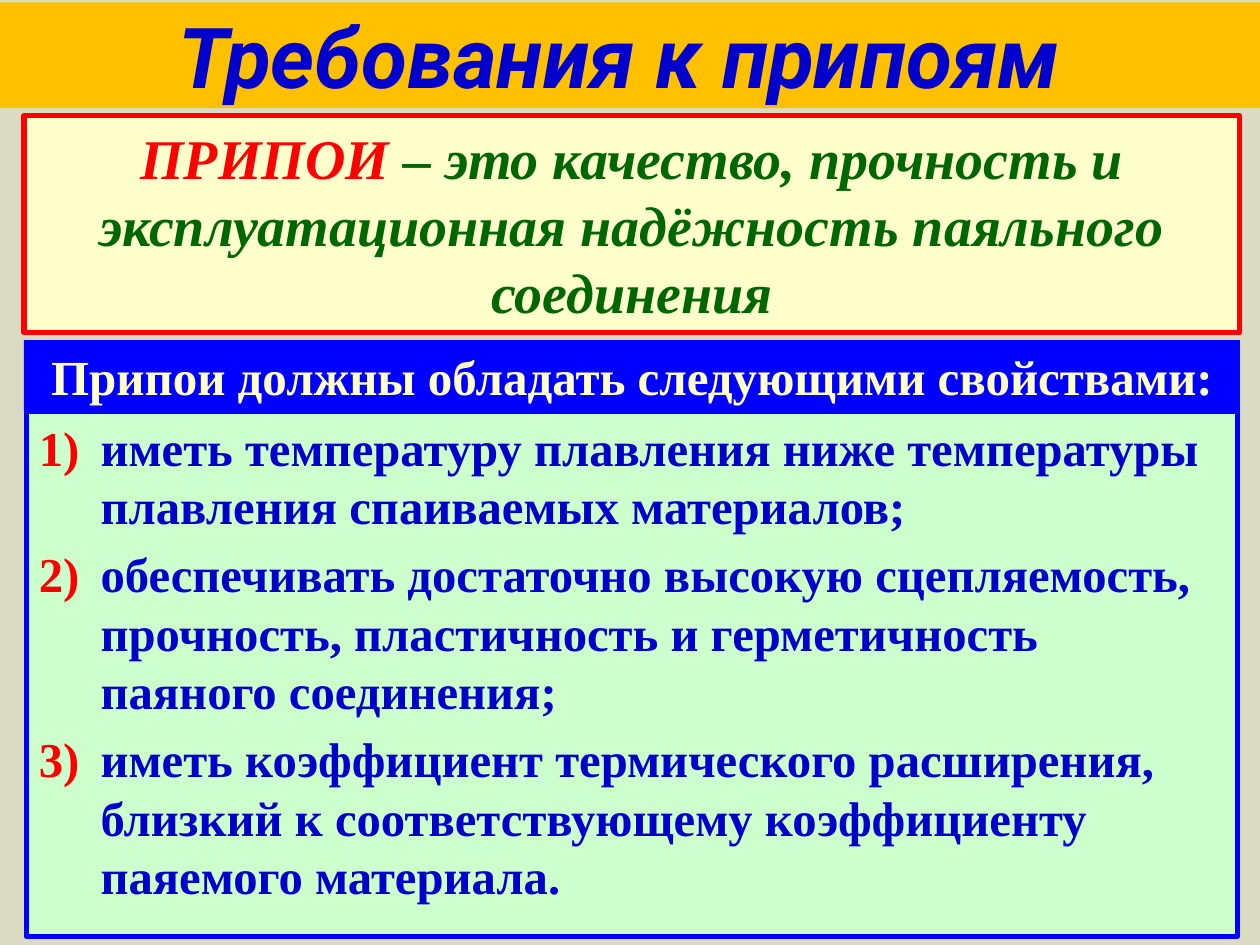
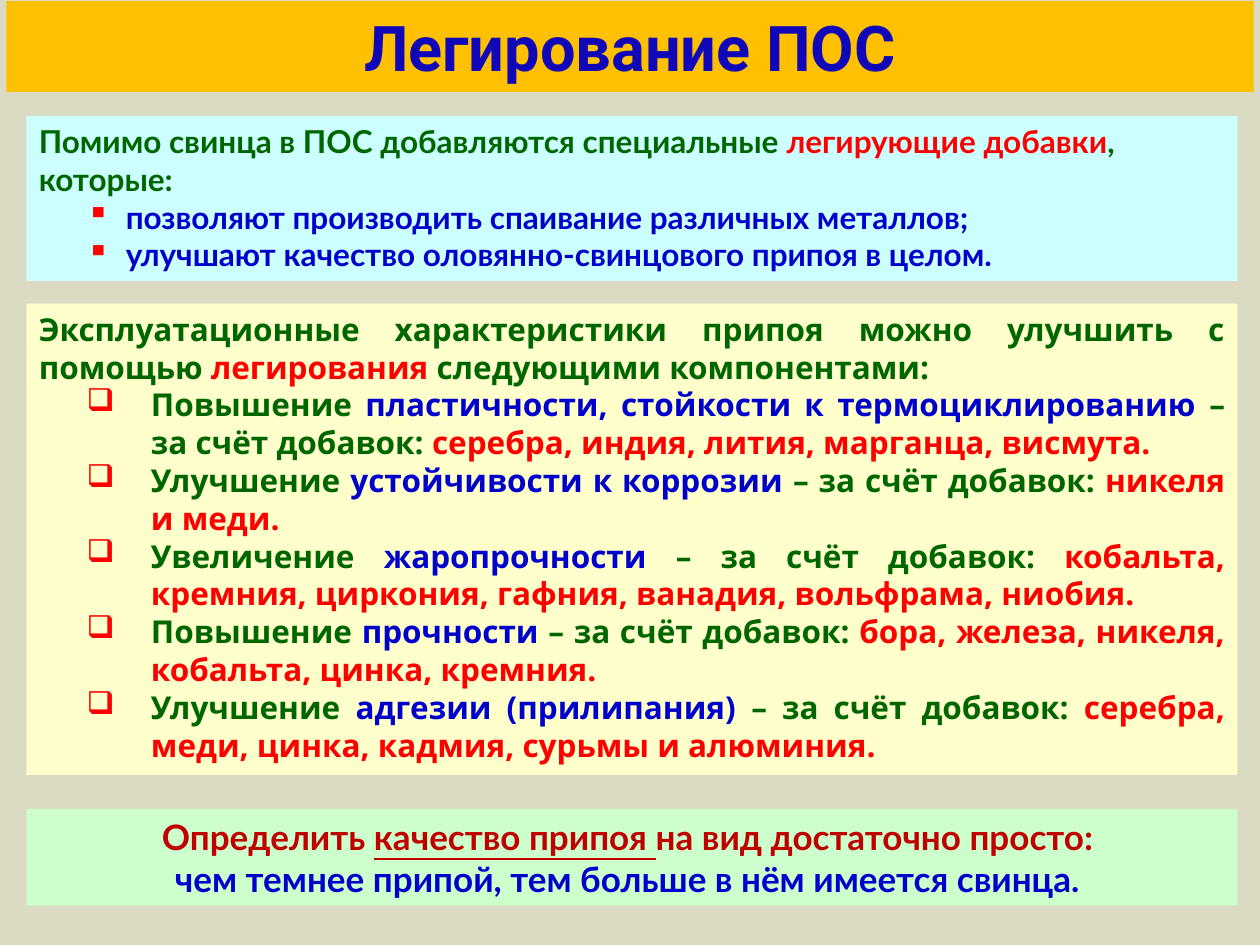
"""Two slides on solders: required properties and alloying of tin-lead solder."""
from dataclasses import dataclass

from lxml import etree
from pptx import Presentation
from pptx.dml.color import RGBColor
from pptx.enum import shapes, text
from pptx.oxml import ns
from pptx.util import Pt


@dataclass(frozen=True)
class Theme:
    """Colours, fonts and type sizes of the deck."""
    page: str = "DBDAC2"
    band: str = "FFC000"
    cream: str = "FFFFCC"
    mint: str = "CCFFCC"
    sky: str = "CCFFFF"
    frame: str = "0000FF"
    red: str = "FF0000"
    dark_red: str = "C00000"
    green: str = "006600"
    blue: str = "0000CC"
    indigo: str = "1008B8"
    heading_font: str = "Roboto"
    serif: str = "Times New Roman"
    sans: str = "Lato"
    wide_sans: str = "Open Sans"
    definition_size: float = 32
    property_size: float = 28
    list_size: float = 27.8
    note_size: float = 18
    conclusion_size: float = 20
    border: float = 3


@dataclass(frozen=True)
class Box:
    """A region of the slide in points."""
    left: float
    top: float
    width: float
    height: float

    def split(self, upper):
        """Cut the box into an upper part of the given height and the rest."""
        return (Box(self.left, self.top, self.width, upper),
                Box(self.left, self.top + upper, self.width, self.height - upper))

    def inset(self, margin):
        """Move the left and right sides inwards."""
        return Box(self.left + margin, self.top, self.width - 2 * margin, self.height)

    def lengths(self):
        """Return the four lengths in the order that add_shape takes."""
        return [Pt(v) for v in (self.left, self.top, self.width, self.height)]


@dataclass(frozen=True)
class Bullet:
    """A list mark with its text indent and hang in points."""
    tag: str
    attributes: dict
    indent: float
    hang: float


THEME = Theme()
NUMBER = Bullet("a:buAutoNum", {"type": "arabicParenR"}, 35.3, 35.3)
SQUARE = Bullet("a:buChar", {"char": "▪"}, 49.7, 22.3)
CHECKBOX = Bullet("a:buChar", {"char": "❑"}, 64.1, 36.7)

PROPERTIES = [
    "иметь температуру плавления ниже температуры плавления спаиваемых материалов;",
    "обеспечивать достаточно высокую сцепляемость, прочность, пластичность и "
    "герметичность паяного соединения;",
    "иметь коэффициент термического расширения, близкий к соответствующему "
    "коэффициенту паяемого материала.",
]
BENEFITS = [
    "позволяют производить спаивание различных металлов;",
    "улучшают качество оловянно-свинцового припоя в целом.",
]
ADDITIVES = [
    ("Повышение", " пластичности, стойкости к термоциклированию ",
     "серебра, индия, лития, марганца, висмута."),
    ("Улучшение", " устойчивости к коррозии ", "никеля и меди."),
    ("Увеличение ", "жаропрочности ",
     "кобальта, кремния, циркония, гафния, ванадия, вольфрама, ниобия."),
    ("Повышение ", "прочности ", "бора, железа, никеля, кобальта, цинка, кремния."),
    ("Улучшение ", "адгезии (прилипания) ",
     "серебра, меди, цинка, кадмия, сурьмы и алюминия."),
]


def colour(code):
    """Turn a hex code into a colour."""
    return RGBColor.from_string(code)


def mark(paragraph, bullet):
    """Give a paragraph a red list mark and a hanging indent."""
    properties = paragraph._p.get_or_add_pPr()
    properties.set("marL", str(Pt(bullet.indent)))
    properties.set("indent", str(-Pt(bullet.hang)))
    tint = etree.SubElement(properties, ns.qn("a:buClr"))
    etree.SubElement(tint, ns.qn("a:srgbClr"), val=THEME.red)
    etree.SubElement(properties, ns.qn(bullet.tag), bullet.attributes)


def write(frame, lines, font, size, align=text.PP_ALIGN.LEFT, bold=True,
          italic=False, gap=0):
    """Fill a frame with lines, each a bullet or None and (text, colour, underline) runs."""
    for index, (bullet, parts) in enumerate(lines):
        paragraph = frame.add_paragraph() if index else frame.paragraphs[0]
        if bullet:
            mark(paragraph, bullet)
        paragraph.alignment = align
        paragraph.space_before = Pt(gap if index else 0)
        for words, tint, *underline in parts:
            run = paragraph.add_run()
            run.text = words
            run.font.name, run.font.size = font, Pt(size)
            run.font.bold, run.font.italic = bold, italic
            run.font.underline = bool(underline) or None
            run.font.color.rgb = colour(tint)


def paint(panel, fill, anchor, border=None):
    """Set the fill, border and text frame of a panel and return the frame."""
    panel.fill.solid()
    panel.fill.fore_color.rgb = colour(fill)
    if border:
        panel.line.color.rgb = colour(border)
        panel.line.width = Pt(THEME.border)
    else:
        panel.line.fill.background()
    frame = panel.text_frame
    frame.word_wrap = True
    frame.auto_size = text.MSO_AUTO_SIZE.NONE
    frame.vertical_anchor = anchor
    return frame


def add_panel(slide, box, fill, border=None, anchor=text.MSO_ANCHOR.TOP):
    """Add a plain rectangle and return its text frame."""
    panel = slide.shapes.add_shape(shapes.MSO_SHAPE.RECTANGLE, *box.lengths())
    panel.shadow.inherit = False
    return paint(panel, fill, anchor, border)


def add_titled_slide(deck, box, heading, tint, size, italic=False):
    """Add a slide whose title is a band across the top."""
    slide = deck.slides.add_slide(deck.slide_layouts[5])
    slide.background.fill.solid()
    slide.background.fill.fore_color.rgb = colour(THEME.page)
    title = slide.shapes.title
    title.left, title.top, title.width, title.height = box.lengths()
    write(paint(title, THEME.band, text.MSO_ANCHOR.MIDDLE), [(None, [(heading, tint)])],
          THEME.heading_font, size, text.PP_ALIGN.CENTER, italic=italic)
    return slide


def add_definition(slide, box):
    """Add the framed statement of what solders are."""
    write(add_panel(slide, box, THEME.cream, THEME.red, text.MSO_ANCHOR.MIDDLE),
          [(None, [("ПРИПОИ ", THEME.red),
                   ("– это качество, прочность и эксплуатационная надёжность "
                    "паяльного соединения", THEME.green)])],
          THEME.serif, THEME.definition_size, text.PP_ALIGN.CENTER, italic=True)


def add_properties(slide, box):
    """Add the numbered list of properties under its header."""
    header, listing = box.split(40.6)
    write(add_panel(slide, listing.inset(1.4), THEME.mint, THEME.frame),
          [(NUMBER, [(item, THEME.blue)]) for item in PROPERTIES],
          THEME.serif, THEME.list_size, gap=5.6)
    write(add_panel(slide, header, THEME.frame),
          [(None, [("Припои должны обладать следующими свойствами:", THEME.cream)])],
          THEME.serif, THEME.property_size, text.PP_ALIGN.CENTER)


def add_benefits(slide, box):
    """Add the note on what alloying additives do."""
    intro = [("Помимо свинца в ПОС добавляются специальные ", THEME.green),
             ("легирующие добавки", THEME.red), (", которые:", THEME.green)]
    write(add_panel(slide, box, THEME.sky),
          [(None, intro)] + [(SQUARE, [(item, THEME.blue)]) for item in BENEFITS],
          THEME.sans, THEME.note_size)


def add_additives(slide, box):
    """Add the list of effects and the elements that give them."""
    intro = [("Эксплуатационные характеристики припоя можно улучшить с помощью ",
              THEME.green),
             ("легирования", THEME.red), (" следующими компонентами:", THEME.green)]
    effects = [(CHECKBOX, [(change, THEME.green), (quality, THEME.blue),
                           ("– за счёт добавок: ", THEME.green), (elements, THEME.red)])
               for change, quality, elements in ADDITIVES]
    write(add_panel(slide, box, THEME.cream), [(None, intro)] + effects,
          THEME.wide_sans, THEME.note_size, text.PP_ALIGN.JUSTIFY)


def add_conclusion(slide, box):
    """Add the closing rule on judging solder by sight."""
    write(add_panel(slide, box, THEME.mint),
          [(None, [("Определить ", THEME.dark_red),
                   ("качество припоя ", THEME.dark_red, True),
                   ("на вид достаточно просто: ", THEME.dark_red)]),
           (None, [("чем темнее припой, тем больше в нём имеется свинца. ", THEME.blue)])],
          THEME.sans, THEME.conclusion_size, text.PP_ALIGN.CENTER, bold=True)


def main():
    """Build both slides and save the deck."""
    deck = Presentation()
    deck.slide_width, deck.slide_height = Pt(720), Pt(540)

    requirements = add_titled_slide(deck, Box(0, 1.4, 720, 60.5), "Требования к припоям ",
                                    THEME.blue, 48, italic=True)
    add_definition(requirements, Box(13.7, 66.2, 694.8, 123.8))
    add_properties(requirements, Box(13.7, 194.4, 694.8, 340.6))

    alloying = add_titled_slide(deck, Box(3.6, 0.7, 712.8, 51.8), "Легирование ПОС",
                                THEME.indigo, 36)
    add_benefits(alloying, Box(15.1, 66.2, 692, 94.3))
    add_additives(alloying, Box(15.1, 173.5, 692, 269.3))
    add_conclusion(alloying, Box(15.1, 462.2, 692, 55.4))
    deck.save("out.pptx")


if __name__ == "__main__":
    main()
